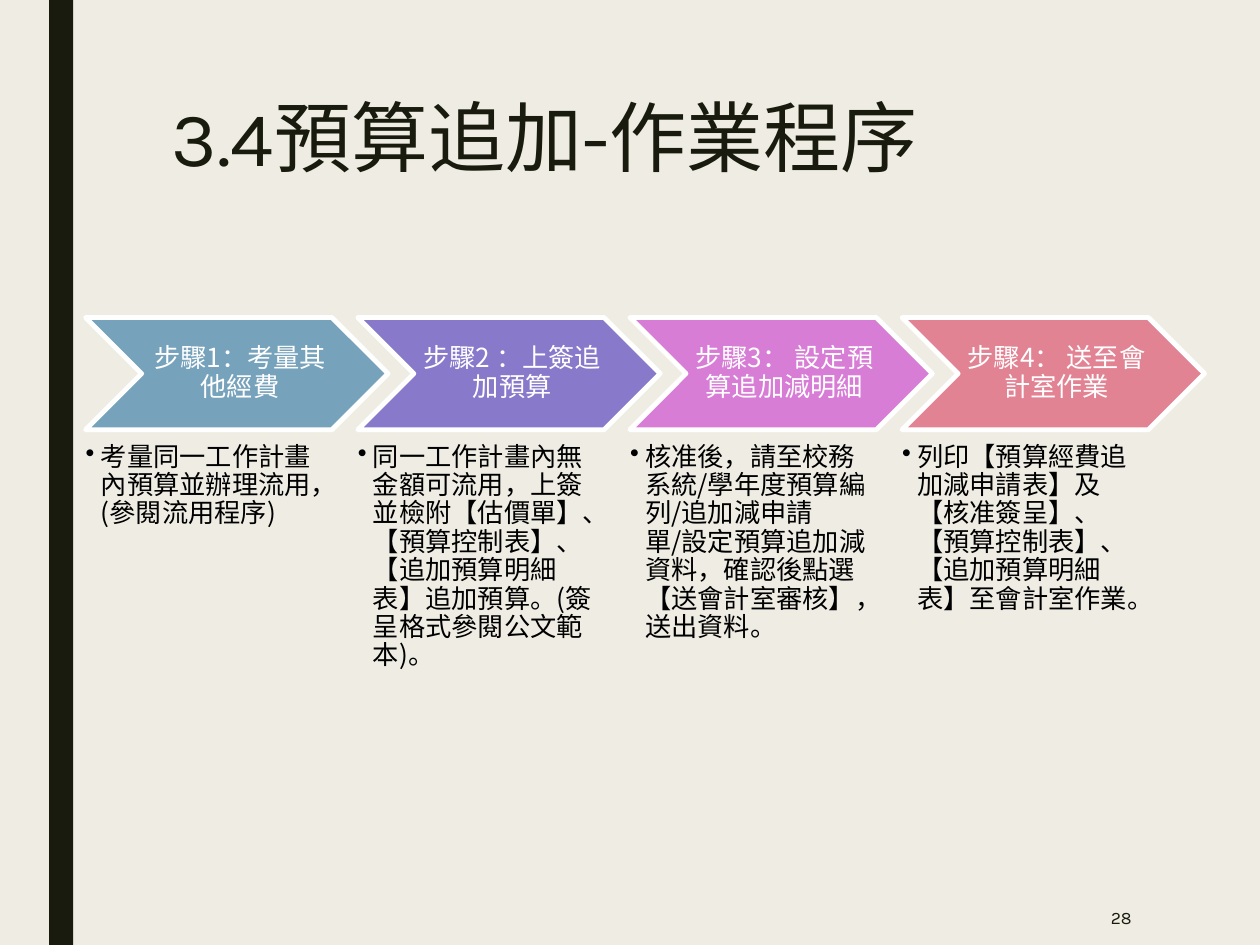
from lxml.etree import SubElement
from pptx import Presentation
from pptx.dml.color import RGBColor
from pptx.enum.shapes import MSO_SHAPE
from pptx.enum.text import MSO_ANCHOR, PP_ALIGN
from pptx.oxml.ns import qn
from pptx.util import Inches, Pt

DARK = "191B0E"
WHITE = "FFFFFF"
CJK_FONT = "Noto Sans CJK SC"
LATIN_FONT = "Karla"
STEP_PITCH = 2.16
STEPS = [
    ("77A2BB", "步驟1：考量其他經費",
     "考量同一工作計畫內預算並辦理流用，(參閱流用程序)"),
    ("8879CA", "步驟2 ：上簽追加預算",
     "同一工作計畫內無金額可流用，上簽並檢附【估價單】、【預算控制表】、"
     "【追加預算明細表】追加預算。(簽呈格式參閱公文範本)。"),
    ("D77DD6", "步驟3： 設定預算追加減明細",
     "核准後，請至校務系統/學年度預算編列/追加減申請單/設定預算追加減資料，"
     "確認後點選【送會計室審核】，送出資料。"),
    ("E28394", "步驟4： 送至會計室作業",
     "列印【預算經費追加減申請表】及【核准簽呈】、【預算控制表】、"
     "【追加預算明細表】至會計室作業。"),
]
TITLE_FORMAT = {"line_spacing": 0.89}
HEADING_FORMAT = {"alignment": PP_ALIGN.CENTER, "line_spacing": 0.9}
DETAIL_FORMAT = {"line_spacing": 0.9}
NUMBER_FORMAT = {"alignment": PP_ALIGN.RIGHT}


def color(value):
    return RGBColor.from_string(value)


def set_attributes(target, values):
    for name, value in values.items():
        setattr(target, name, value)


def add_shape(slide, kind, box, fill, line=None):
    shape = slide.shapes.add_shape(kind, *map(Inches, box))
    shape.shadow.inherit = False
    shape.fill.solid()
    shape.fill.fore_color.rgb = color(fill)
    if line:
        shape.line.color.rgb = color(line)
        shape.line.width = Pt(2.75)
    else:
        shape.line.fill.background()


def add_text(slide, box, text, size, font, text_color, paragraph_format,
             anchor=MSO_ANCHOR.TOP, insets=(0.1, 0.05, 0.1, 0.05)):
    frame = slide.shapes.add_textbox(*map(Inches, box)).text_frame
    sides = ("margin_left", "margin_top", "margin_right", "margin_bottom")
    set_attributes(frame, {"word_wrap": True, "vertical_anchor": anchor})
    set_attributes(frame, dict(zip(sides, map(Inches, insets))))
    paragraph = frame.paragraphs[0]
    set_attributes(paragraph, paragraph_format)
    run = paragraph.add_run()
    run.text = text
    set_attributes(run.font, {"size": Pt(size), "name": font})
    run.font.color.rgb = color(text_color)
    SubElement(run.font._element, qn("a:ea"), typeface=CJK_FONT)
    return paragraph


def add_bullet(paragraph, indent):
    properties = paragraph._p.get_or_add_pPr()
    properties.set("marL", str(Inches(indent)))
    properties.set("indent", str(-Inches(indent)))
    SubElement(properties, qn("a:buChar"), char="•")


def add_step(slide, box, fill, heading, detail):
    left, top, width, height = box
    notch = height / 2
    add_shape(slide, MSO_SHAPE.CHEVRON, box, fill, WHITE)
    add_text(slide, (left + notch, top, width - 2 * notch, height), heading, 15,
             CJK_FONT, WHITE, HEADING_FORMAT, MSO_ANCHOR.MIDDLE,
             (0.07, 0.02, 0.02, 0.02))
    paragraph = add_text(slide, (left, top + 1, width * 0.8, 2.3), detail, 15,
                         CJK_FONT, "000000", DETAIL_FORMAT, insets=(0, 0, 0, 0))
    add_bullet(paragraph, 0.12)


def add_process(slide, box):
    left, top, width, height = box
    for index, step in enumerate(STEPS):
        add_step(slide, (left + index * STEP_PITCH, top, width, height), *step)


def add_frame(slide, box):
    left, top, width, height = box
    add_shape(slide, MSO_SHAPE.RECTANGLE, (left + 0.39, top, 0.19, height), DARK)
    add_text(slide, (left + 1.12, top + 0.75, 7.88, 1.62), " 3.4預算追加-作業程序",
             44, LATIN_FONT, DARK, TITLE_FORMAT)
    add_text(slide, (left + width - 2.23, top + height - 0.44, 1.31, 0.44), "28",
             10, LATIN_FONT, DARK, NUMBER_FORMAT, MSO_ANCHOR.MIDDLE)


def main():
    presentation = Presentation()
    set_attributes(presentation,
                   {"slide_width": Inches(10), "slide_height": Inches(7.5)})
    slide = presentation.slides.add_slide(presentation.slide_layouts[6])
    slide.background.fill.solid()
    slide.background.fill.fore_color.rgb = color("EFEDE3")
    add_frame(slide, (0, 0, 10, 7.5))
    add_process(slide, (0.68, 2.52, 2.4, 0.89))
    presentation.save("out.pptx")


if __name__ == "__main__":
    main()
